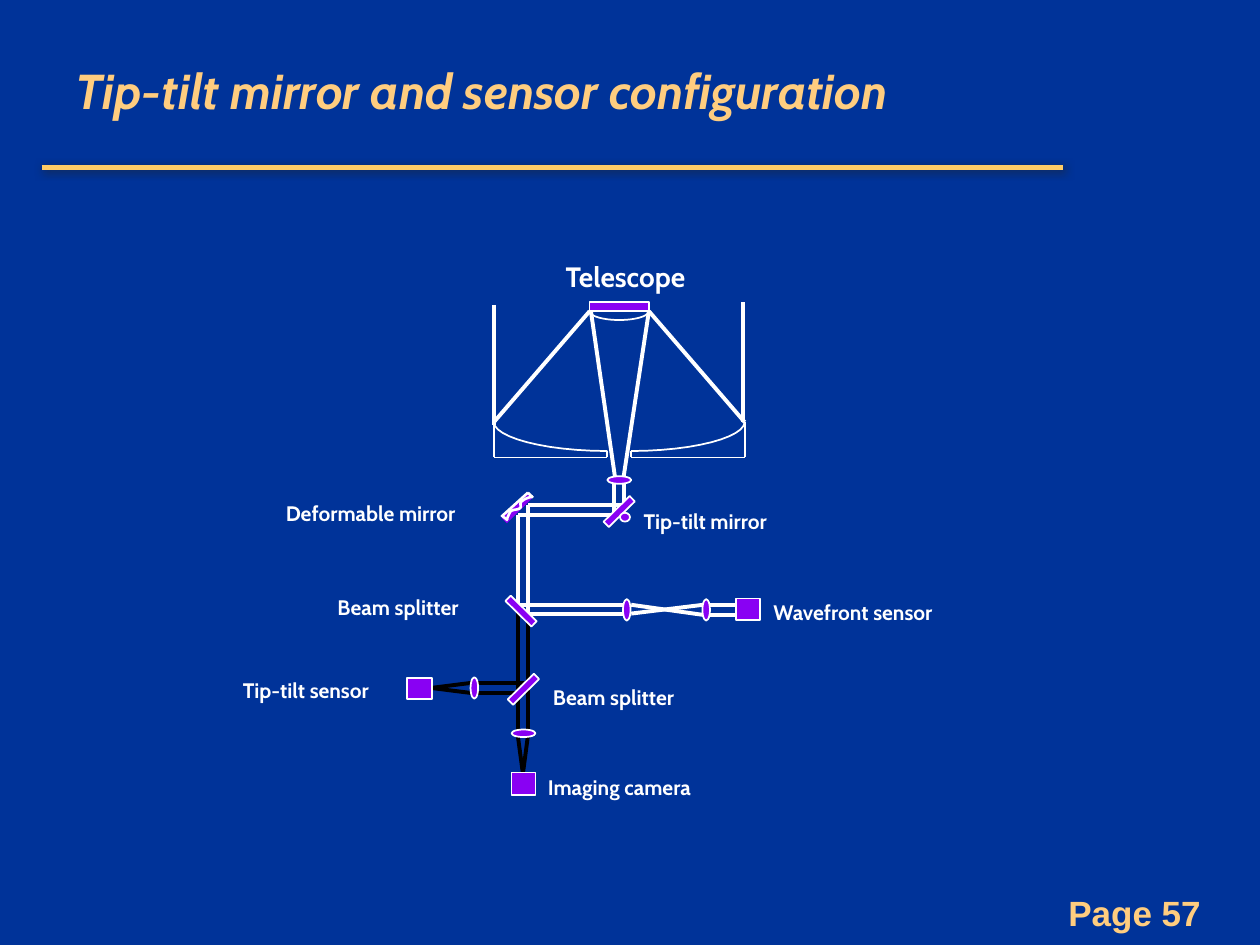
"""Build a slide showing the light path of a tip-tilt mirror and its sensors."""
from dataclasses import dataclass
from lxml.etree import SubElement as Sub
from pptx import Presentation as Deck
from pptx.dml.color import RGBColor as Rgb
from pptx.enum.shapes import MSO_CONNECTOR as Link, MSO_SHAPE as Kind
from pptx.enum.text import MSO_ANCHOR as Anchor, PP_ALIGN as Align
from pptx.oxml.ns import qn
from pptx.util import Cm, Pt


@dataclass(frozen=True)
class Theme:
    back: str = "003399"
    gold: str = "FFCD7F"
    rule: str = "FFCC66"
    white: str = "FFFFFF"
    black: str = "000000"
    glass: str = "8901F3"
    shade: str = "232323"
    font: str = "Cabin"
    plain: str = "Arial"
    title: int = 28
    page: int = 20
    head: int = 16
    label: int = 12
    beam: float = 2.25
    edge: float = 1.5
    thin: float = 1


T = Theme()
TITLE = "Tip-tilt mirror and sensor configuration"
PAGE = "Page 57"
AXIS = 4.915

LABELS = [
    ("Telescope", 4.39, 2.01, 1.31, T.head),
    ("Tip-tilt mirror", 5.01, 3.99, 1.35, T.label),
    ("Deformable mirror", 2.17, 3.92, 1.76, T.label),
    ("Beam splitter", 2.58, 4.67, 1.32, T.label),
    ("Beam splitter", 4.29, 5.38, 1.32, T.label),
    ("Wavefront sensor", 6.04, 4.71, 1.68, T.label),
    ("Imaging camera", 4.25, 6.1, 1.83, T.label),
    ("Tip-tilt sensor", 1.83, 5.33, 1.37, T.label),
]

HALF = [
    (3.92, 3.63, 4.82, 3.63),
    (3.92, 3.35, 3.92, 3.63),
    (4.82, 3.58, 4.82, 3.63),
]
BOWL = [(4.82, 3.58), (4.32, 3.58), (3.92, 3.47), (3.92, 3.35)]

WHITE = [
    (3.92, 2.42, 3.92, 3.37), (5.9, 2.4, 5.9, 3.35),
    (3.92, 3.35, 4.68, 2.47), (5.91, 3.35, 5.15, 2.47),
    (4.69, 2.47, 4.88, 3.78), (5.15, 2.47, 4.95, 3.78),
    (4.87, 3.84, 4.87, 4.09), (4.95, 3.84, 4.95, 4.01),
    (4.87, 4.09, 4.11, 4.09), (4.95, 4.01, 4.19, 4.01),
    (4.11, 4.09, 4.11, 4.8), (4.19, 4.01, 4.19, 4.87),
    (4.95, 4.8, 4.11, 4.8), (4.95, 4.87, 4.19, 4.87),
    (5.84, 4.8, 5.58, 4.8), (5.84, 4.88, 5.58, 4.88),
    (5.01, 4.8, 5.58, 4.88), (5.01, 4.87, 5.58, 4.8),
]
BLACK = [
    (4.11, 4.8, 4.11, 5.5), (4.19, 4.88, 4.19, 5.42),
    (4.11, 5.5, 3.74, 5.5), (4.19, 5.42, 3.74, 5.42),
    (3.42, 5.46, 3.74, 5.5), (3.42, 5.46, 3.74, 5.42),
    (4.19, 5.42, 4.19, 5.84), (4.11, 5.5, 4.11, 5.84),
    (4.15, 6.14, 4.19, 5.84), (4.15, 6.14, 4.11, 5.84),
]

LENSES = [
    (4.82, 3.78, 0.19, 0.06, 0), (4.89, 4.81, 0.17, 0.06, 270),
    (5.52, 4.81, 0.17, 0.06, 270), (3.68, 5.43, 0.17, 0.06, 270),
    (4.06, 5.79, 0.19, 0.06, 0),
]
PLATES = [
    (5.84, 4.75, 0.19, 0.17, 0), (3.23, 5.38, 0.2, 0.17, 0),
    (4.06, 6.13, 0.19, 0.18, 0), (3.99, 4.82, 0.29, 0.06, 44.5),
    (4.01, 5.44, 0.29, 0.06, 315.5), (4.77, 4.03, 0.29, 0.06, 315.5),
]
PIVOT = (4.92, 4.07, 0.08, 0.07)
RIM = [(4.23, 3.95, 4.19, 3.91), (4.03, 4.13, 3.98, 4.09), (4.19, 3.91, 3.98, 4.1)]
WAVE = [
    (4.23, 3.94), (4.19, 3.95), (4.16, 3.96), (4.14, 3.98),
    (4.12, 3.99), (4.14, 4.02), (4.13, 4.03),
    (4.11, 4.05), (4.07, 4.04), (4.05, 4.06),
    (4.04, 4.08), (4.03, 4.1), (4.02, 4.13),
]


def size(inch):
    return Cm(inch * 2.54)


def ray(ends, tint=T.white, width=T.beam):
    line = slide.shapes.add_connector(Link.STRAIGHT, *map(size, ends))
    line.line.color.rgb = Rgb.from_string(tint)
    line.line.width = Pt(width)
    return Sub(line._element.spPr, qn("a:effectLst"))


def paint(shape, fill, width):
    shape.shadow.inherit = False
    if fill:
        shape.fill.solid()
        shape.fill.fore_color.rgb = Rgb.from_string(fill)
    else:
        shape.fill.background()
    if width:
        shape.line.color.rgb = Rgb.from_string(T.white)
        shape.line.width = Pt(width)
    else:
        shape.line.fill.background()


def part(kind, box, turn=0, fill=T.glass, width=T.thin):
    shape = slide.shapes.add_shape(kind, *map(size, box))
    shape.rotation = turn
    paint(shape, fill, width)


def curve(knots, fill=None, width=T.thin, steps=12):
    spots = [knots[0]]
    for i in range(0, len(knots) - 1, 3):
        quad = knots[i:i + 4]
        for n in range(1, steps + 1):
            t = n / steps
            mix = ((1 - t) ** 3, 3 * t * (1 - t) ** 2, 3 * t * t * (1 - t), t ** 3)
            spots.append(tuple(sum(m * p[k] for m, p in zip(mix, quad)) for k in (0, 1)))
    spots = [(size(x), size(y)) for x, y in spots]
    pen = slide.shapes.build_freeform(*spots[0])
    pen.add_line_segments(spots[1:], close=False)
    paint(pen.convert_to_shape(), fill, width)


def write(frame, text, points, tint, face=T.font, slant=False, align=Align.LEFT):
    frame.word_wrap = True
    line = frame.paragraphs[0]
    line.alignment = align
    run = line.add_run()
    run.text = text
    font = run.font
    font.name, font.size, font.bold, font.italic = face, Pt(points), True, slant
    font.color.rgb = Rgb.from_string(tint)


def flip(x):
    return 2 * AXIS - x


deck = Deck()
deck.slide_width, deck.slide_height = size(10), size(7.5)
slide = deck.slides.add_slide(deck.slide_layouts[5])
slide.background.fill.solid()
slide.background.fill.fore_color.rgb = Rgb.from_string(T.back)

glow = Sub(ray((0.33, 1.33, 8.44, 1.33), T.rule, 3), qn("a:outerShdw"),
           blurRad=str(Pt(5)), dist=str(Pt(1.4)), dir="2700000", rotWithShape="0")
Sub(Sub(glow, qn("a:srgbClr"), val=T.shade), qn("a:alpha"), val="75000")

title = slide.shapes.title
title.left, title.top, title.width, title.height = map(size, (0.5, 0, 7.83, 1.42))
title.text_frame.vertical_anchor = Anchor.MIDDLE
write(title.text_frame, TITLE, T.title, T.gold, slant=True)

page = slide.shapes.add_textbox(*map(size, (7.22, 7.03, 2.59, 0.43))).text_frame
page.margin_right = size(0.28)
write(page, PAGE, T.page, T.gold, T.plain, align=Align.RIGHT)

for side in (float, flip):
    for x1, y1, x2, y2 in HALF:
        ray((side(x1), y1, side(x2), y2), width=T.thin)
    curve([(side(x), y) for x, y in BOWL])

part(Kind.OVAL, (4.68, 2.4, 0.47, 0.14), fill=None)
part(Kind.RECTANGLE, (4.68, 2.4, 0.47, 0.07))

for tint, rays in ((T.white, WHITE), (T.black, BLACK)):
    for ends in rays:
        ray(ends, tint)

for kind, parts in ((Kind.OVAL, LENSES), (Kind.RECTANGLE, PLATES)):
    for *box, turn in parts:
        part(kind, box, turn)
part(Kind.OVAL, PIVOT)

part(Kind.RECTANGLE, (3.96, 4, 0.29, 0.06), 315.5, width=0)
for ends in RIM:
    ray(ends, width=T.edge)
curve(WAVE, T.glass, T.edge)

for text, x, y, wide, points in LABELS:
    tall = 0.37 if points == T.head else 0.3
    box = slide.shapes.add_textbox(*map(size, (x, y, wide, tall)))
    write(box.text_frame, text, points, T.white)

deck.save("out.pptx")
